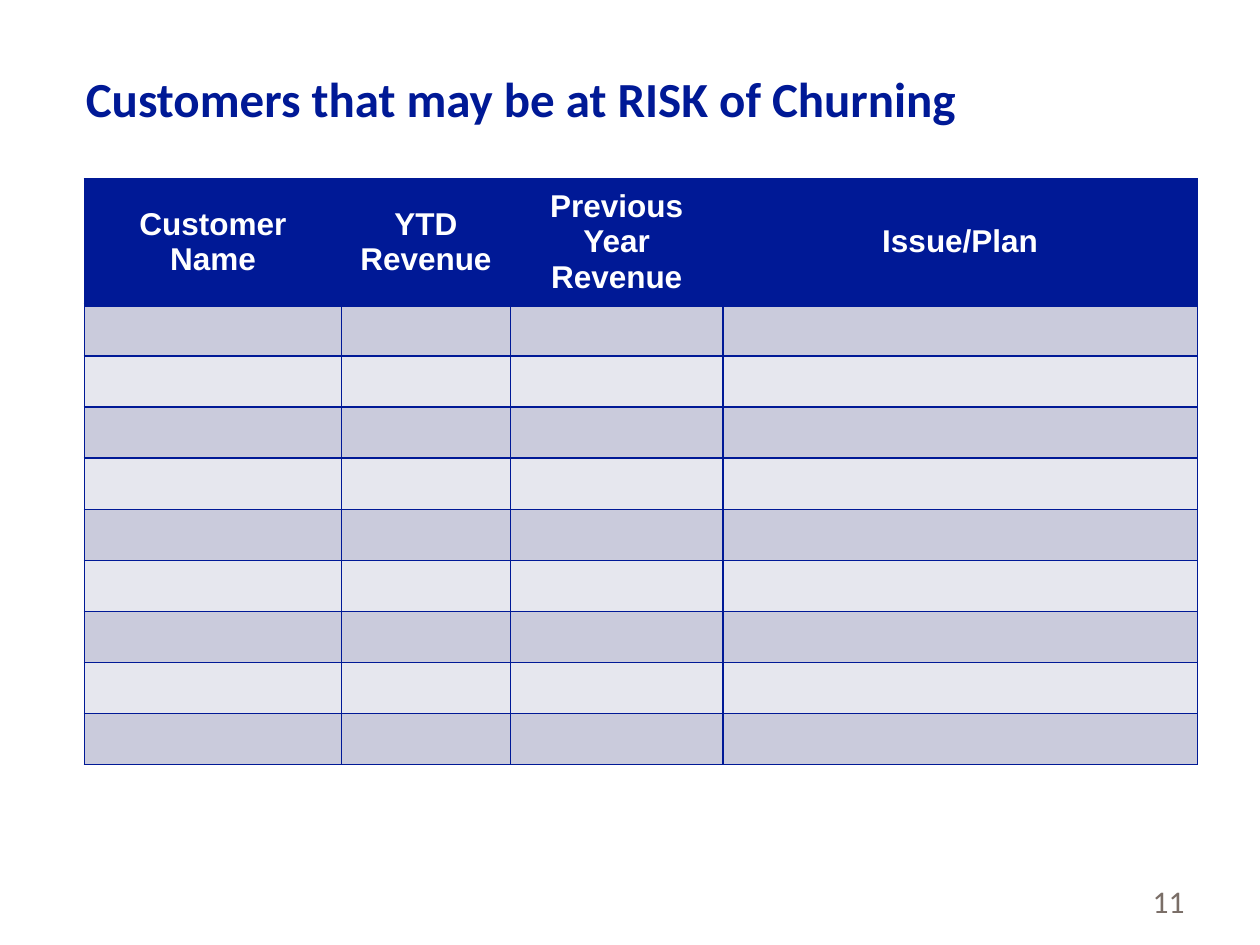
"""Build the slide that lists customers at risk of churning."""
from lxml.etree import SubElement
from pptx import Presentation
from pptx.dml.color import RGBColor
from pptx.enum.text import MSO_ANCHOR, PP_ALIGN
from pptx.oxml.ns import qn
from pptx.util import Pt

NAVY = RGBColor(0x00, 0x19, 0x96)
WHITE = RGBColor(0xFF, 0xFF, 0xFF)
GREY = RGBColor(0x7A, 0x6E, 0x67)
BANDS = (RGBColor(0xE6, 0xE7, 0xEE), RGBColor(0xCA, 0xCB, 0xDC))

HEADERS = ("Customer Name", "YTD Revenue", "Previous Year\nRevenue", "Issue/Plan")
COL_WIDTHS = (147, 96.5, 121.5, 271)
HEADER_HEIGHT = 68
ROW_HEIGHT = 29.2
BODY_ROWS = 9


def style_paragraph(p, name, size, color, bold=False, align=PP_ALIGN.LEFT):
    p.alignment = align
    p.font.name = name
    p.font.size = Pt(size)
    p.font.bold = bold
    p.font.color.rgb = color


def add_text(slide, text, left, top, width, height, **style):
    sp = slide.shapes.add_textbox(Pt(left), Pt(top), Pt(width), Pt(height))
    tf = sp.text_frame
    tf.word_wrap = True
    tf.vertical_anchor = MSO_ANCHOR.MIDDLE
    tf.text = text
    style_paragraph(tf.paragraphs[0], **style)


def set_borders(cell, bottom=1):
    tcPr = cell._tc.get_or_add_tcPr()
    for side, width in (("L", 1), ("R", 1), ("T", 1), ("B", bottom)):
        ln = SubElement(tcPr, qn(f"a:ln{side}"), w=str(Pt(width)))
        fill = SubElement(ln, qn("a:solidFill"))
        SubElement(fill, qn("a:srgbClr"), val=str(NAVY))


def fill_cell(cell, color):
    cell.fill.solid()
    cell.fill.fore_color.rgb = color


def add_customer_table(slide, left, top):
    height = HEADER_HEIGHT + BODY_ROWS * ROW_HEIGHT
    table = slide.shapes.add_table(
        BODY_ROWS + 1, len(HEADERS), Pt(left), Pt(top),
        Pt(sum(COL_WIDTHS)), Pt(height)).table
    for column, width in zip(table.columns, COL_WIDTHS):
        column.width = Pt(width)
    for i, row in enumerate(table.rows):
        row.height = Pt(ROW_HEIGHT if i else HEADER_HEIGHT)
        for cell, header in zip(row.cells, HEADERS):
            set_borders(cell, bottom=1 if i else 3)
            fill_cell(cell, BANDS[i % 2] if i else NAVY)
            if i == 0:
                cell.text = header
                cell.vertical_anchor = MSO_ANCHOR.MIDDLE
                for p in cell.text_frame.paragraphs:
                    style_paragraph(p, "Arial", 18, WHITE, True, PP_ALIGN.CENTER)


def main():
    prs = Presentation()
    prs.slide_width, prs.slide_height = Pt(720), Pt(540)
    slide = prs.slides.add_slide(prs.slide_layouts[6])
    add_text(slide, "Customers that may be at RISK of Churning", 42, 21.6, 648, 68.4,
             name="Calibri", size=28, color=NAVY, bold=True)
    add_customer_table(slide, 48.2, 102.2)
    add_text(slide, "11", 516, 500.4, 168, 28.8,
             name="Calibri", size=18, color=GREY, align=PP_ALIGN.RIGHT)
    prs.save("out.pptx")


if __name__ == "__main__":
    main()
